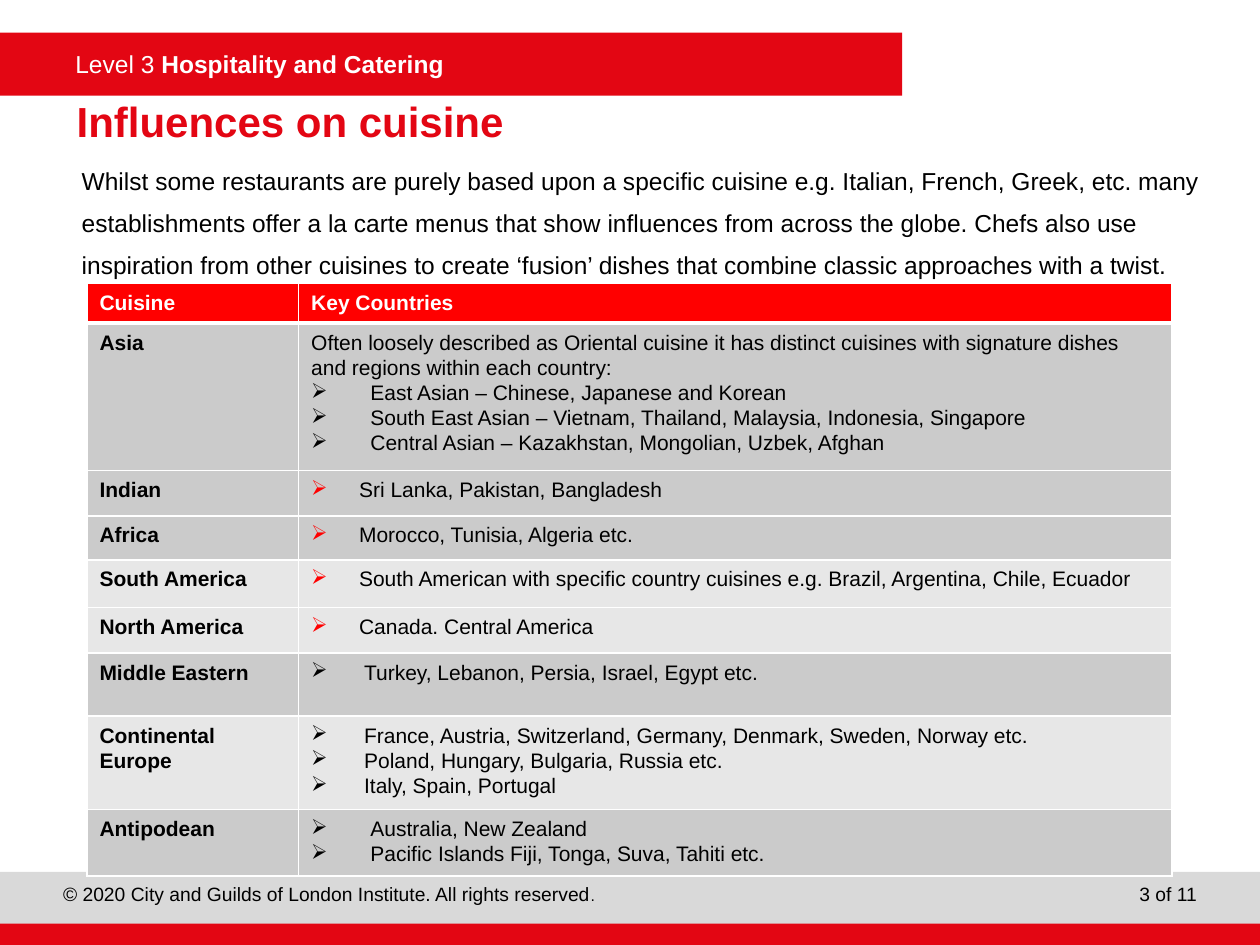
from lxml import etree
from pptx import Presentation
from pptx.dml.color import RGBColor
from pptx.enum.shapes import MSO_SHAPE
from pptx.enum.text import MSO_ANCHOR, PP_ALIGN
from pptx.oxml.ns import qn
from pptx.util import Inches, Pt

RECT = MSO_SHAPE.RECTANGLE
MIDDLE = MSO_ANCHOR.MIDDLE
RIGHT = PP_ALIGN.RIGHT

RED = RGBColor(0xE3, 0x06, 0x13)
BRIGHT = RGBColor(0xFF, 0x00, 0x00)
BLACK = RGBColor(0x00, 0x00, 0x00)
WHITE = RGBColor(0xFF, 0xFF, 0xFF)
SILVER = RGBColor(0xD9, 0xD9, 0xD9)
DARK = RGBColor(0xCB, 0xCB, 0xCB)
LIGHT = RGBColor(0xE7, 0xE7, 0xE7)

INTRO = (
    "Whilst some restaurants are purely based upon a specific cuisine e.g. Italian, French, "
    "Greek, etc. many establishments offer a la carte menus that show influences from across "
    "the globe. Chefs also use inspiration from other cuisines to create ‘fusion’ dishes that "
    "combine classic approaches with a twist."
)
ASIA = (
    "Often loosely described as Oriental cuisine it has distinct cuisines with signature "
    "dishes and regions within each country:"
)

# Cuisine, height, fill, bullet indent, bullet colour, lead text, bullet items
ROWS = [
    ("Asia", 1.1, DARK, 0.47, BLACK, ASIA, [
        "East Asian – Chinese, Japanese and Korean",
        "South East Asian – Vietnam, Thailand, Malaysia, Indonesia, Singapore",
        "Central Asian – Kazakhstan, Mongolian, Uzbek, Afghan"]),
    ("Indian", 0.36, DARK, 0.38, BRIGHT, "", ["Sri Lanka, Pakistan, Bangladesh"]),
    ("Africa", 0.35, DARK, 0.38, BRIGHT, "", ["Morocco, Tunisia, Algeria etc."]),
    ("South America", 0.38, LIGHT, 0.38, BRIGHT, "", [
        "South American with specific country cuisines e.g. Brazil, Argentina, Chile, Ecuador"]),
    ("North America", 0.36, LIGHT, 0.38, BRIGHT, "", ["Canada. Central America"]),
    ("Middle Eastern", 0.5, DARK, 0.42, BLACK, "", [
        "Turkey, Lebanon, Persia, Israel, Egypt etc."]),
    ("Continental Europe", 0.7, LIGHT, 0.42, BLACK, "", [
        "France, Austria, Switzerland, Germany, Denmark, Sweden, Norway etc.",
        "Poland, Hungary, Bulgaria, Russia etc.",
        "Italy, Spain, Portugal"]),
    ("Antipodean", 0.5, DARK, 0.47, BLACK, "", [
        "Australia, New Zealand",
        "Pacific Islands Fiji, Tonga, Suva, Tahiti etc."]),
]


class Deck:
    font = "Arial"

    def __init__(self):
        self.prs = Presentation()
        self.prs.slide_width, self.prs.slide_height = Inches(10), Inches(7.5)
        self.slide = self.prs.slides.add_slide(self.prs.slide_layouts[6])

    def band(self, box, fill):
        shape = self.slide.shapes.add_shape(RECT, *map(Inches, box))
        shape.shadow.inherit = False
        shape.fill.solid()
        shape.fill.fore_color.rgb = fill
        shape.line.fill.background()

    def run(self, para, text, size, color=BLACK, bold=False):
        run = para.add_run()
        run.text = text
        style = {"name": self.font, "size": Pt(size), "bold": bold}
        for key, value in style.items():
            setattr(run.font, key, value)
        run.font.color.rgb = color

    def text(self, box, runs, pad=True, anchor=None, **form):
        """Add a one-paragraph box; form holds paragraph settings."""
        frame = self.slide.shapes.add_textbox(*map(Inches, box)).text_frame
        frame.word_wrap = True
        if anchor is not None:
            frame.vertical_anchor = anchor
        if not pad:
            for side in ("left", "top", "right", "bottom"):
                setattr(frame, f"margin_{side}", 0)
        para = frame.paragraphs[0]
        for key, value in form.items():
            setattr(para, key, value)
        for run in runs:
            self.run(para, *run)

    def bullet(self, para, indent, color):
        props = para._p.get_or_add_pPr()
        props.set("marL", str(Inches(indent)))
        props.set("indent", str(-Inches(indent)))
        tint = etree.SubElement(props, qn("a:buClr"))
        etree.SubElement(tint, qn("a:srgbClr"), val=str(color))
        etree.SubElement(props, qn("a:buChar"), char="➢")

    def cell(self, cell, fill, top=1, bottom=1):
        """Give a cell its white borders and its fill."""
        props = cell._tc.get_or_add_tcPr()
        for side, width in zip("LRTB", (1, 1, top, bottom)):
            line = etree.SubElement(props, qn(f"a:ln{side}"), w=str(Pt(width)))
            paint = etree.SubElement(line, qn("a:solidFill"))
            etree.SubElement(paint, qn("a:srgbClr"), val=str(WHITE))
        cell.fill.solid()
        cell.fill.fore_color.rgb = fill

    def line(self, cell, text, color=BLACK, bold=False, mark=None):
        """Add a paragraph to a cell; mark is a bullet's indent and colour."""
        frame = cell.text_frame
        para = frame.paragraphs[0]
        if para.runs:
            para = frame.add_paragraph()
        if mark:
            self.bullet(para, *mark)
        para.line_spacing = 1.07
        self.run(para, text, 12, color, bold)

    def table(self, left, top, widths, heads, rows):
        heights = [0.28] + [row[1] for row in rows]
        box = left, top, sum(widths), sum(heights)
        table = self.slide.shapes.add_table(
            len(heights), len(widths), *map(Inches, box)).table
        for col, width in zip(table.columns, widths):
            col.width = Inches(width)
        for row, height in zip(table.rows, heights):
            row.height = Inches(height)
        for col, head in enumerate(heads):
            cell = table.cell(0, col)
            self.cell(cell, BRIGHT, bottom=3)
            self.line(cell, head, WHITE, True)
        for num, (name, _, fill, indent, color, lead, items) in enumerate(rows, 1):
            first, last = table.cell(num, 0), table.cell(num, 1)
            for cell in (first, last):
                self.cell(cell, fill, top=3 if num == 1 else 1)
            self.line(first, name, bold=True)
            if lead:
                self.line(last, lead)
            for item in items:
                self.line(last, item, mark=(indent, color))


def main():
    deck = Deck()
    deck.band((0, 0.26, 7.16, 0.5), RED)
    deck.text((0.5, 0.34, 6.66, 0.34), [
        ("Level 3 ", 14, WHITE), ("Hospitality and Catering", 14, WHITE, True)])
    deck.band((0, 6.92, 10, 0.42), SILVER)
    deck.band((0, 7.33, 10, 0.17), RED)
    deck.text((0.5, 7, 7.08, 0.25), [
        ("© 2020 City and Guilds of London Institute. All rights reserved", 11),
        (".", 9)], pad=False)
    deck.text((7.92, 7, 1.58, 0.25), [("3 of 11", 11)], pad=False, alignment=RIGHT)
    deck.text((0.51, 0.75, 8.99, 0.42), [("Influences on cuisine", 24, RED, True)],
              anchor=MIDDLE)
    deck.text((0.55, 1.17, 9.25, 5.2), [(INTRO, 14)],
              line_spacing=Pt(24), space_after=Pt(10))
    deck.table(0.69, 2.25, (1.68, 6.93), ("Cuisine", "Key Countries"), ROWS)
    deck.prs.save("out.pptx")


if __name__ == "__main__":
    main()
